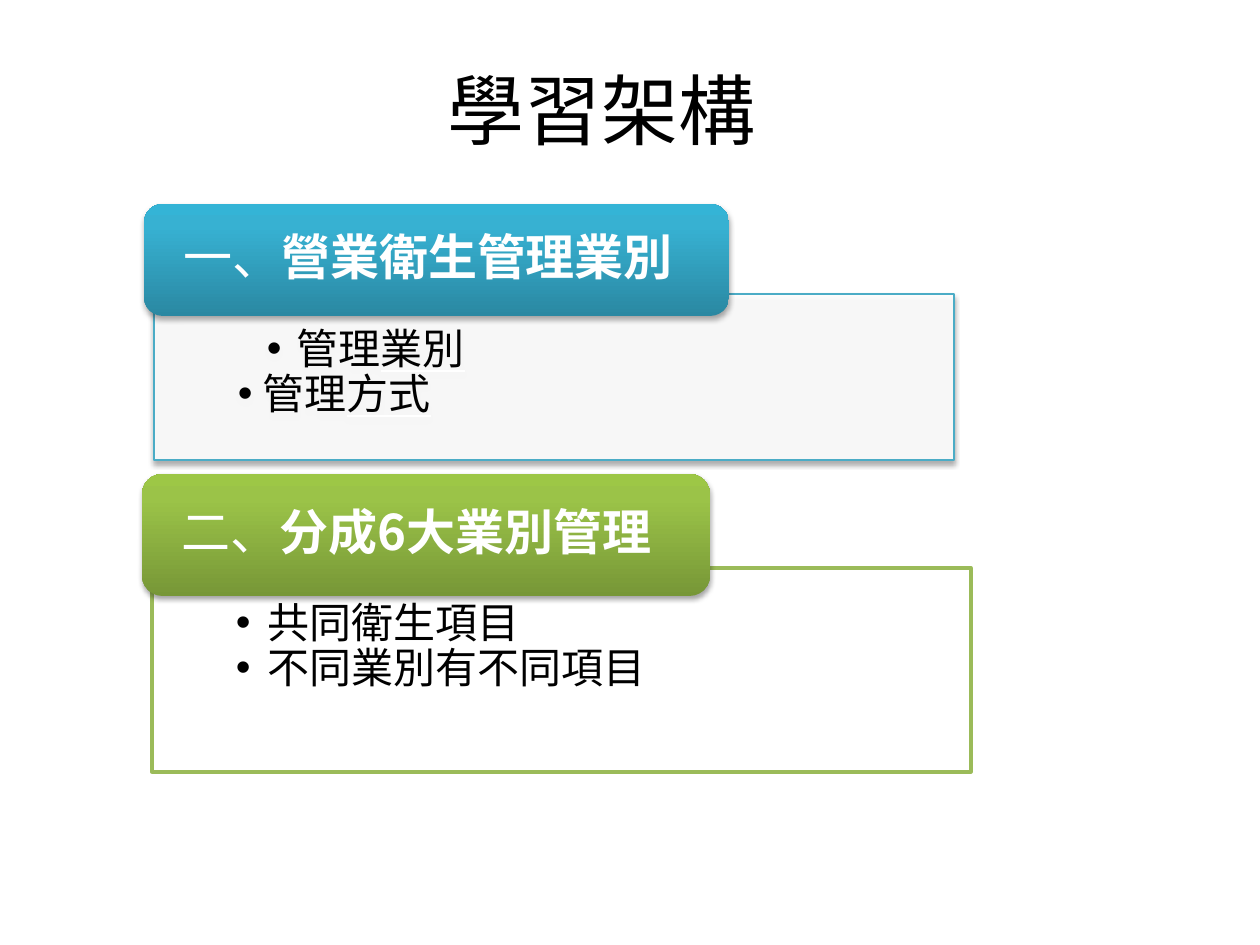
from lxml import etree
from pptx import Presentation
from pptx.dml.color import RGBColor
from pptx.enum.shapes import MSO_SHAPE
from pptx.enum.text import MSO_ANCHOR, PP_ALIGN
from pptx.oxml.ns import qn
from pptx.util import Emu, Pt

RECTANGLE, ROUNDED = MSO_SHAPE.RECTANGLE, MSO_SHAPE.ROUNDED_RECTANGLE
TOP, MIDDLE = MSO_ANCHOR.TOP, MSO_ANCHOR.MIDDLE
LEFT, CENTER = PP_ALIGN.LEFT, PP_ALIGN.CENTER
FONT = "Noto Sans CJK SC"
BLACK, WHITE = "000000", "FFFFFF"
PANEL_MARGINS = (84, 34, 84, 24)

# Each section: header (box, gradient, runs), panel (box, line, opacity, bullets)
# A bullet is (left margin, hanging indent, runs); a run is (text, format)
UNDERLINED = {"underline": True}
BOLD = {"bold": True}
SECTIONS = [
    {
        "header_box": (144, 204, 585, 112),
        "gradient": [(0, "2A88A2"), (80, "37B1D2"), (100, "34B4D6")],
        "heading": [("一、", {}), ("營業衛生管理業別", BOLD)],
        "panel_box": (154, 294, 800, 166),
        "line": ("4BACC6", 0.75),
        "translucent": True,
        "bullets": [
            (59, 30, [("管理", {}), ("業別", UNDERLINED)]),
            (25, 25, [("管理", {}), ("方式", UNDERLINED)]),
        ],
    },
    {
        "header_box": (142, 474, 568, 122),
        "gradient": [(0, "779737"), (80, "9BC348"), (100, "9DC746")],
        "heading": [("二、", {}), ("分成6大業別管理", BOLD)],
        "panel_box": (152, 568, 819, 204),
        "line": ("9BBB59", 2),
        "translucent": False,
        "bullets": [
            (32, 32, [("共同衛生項目", {})]),
            (32, 32, [("不同業別有不同項目", {})]),
        ],
    },
]


def px(length):
    return Emu(round(length * 914400 / 126))


def color(value):
    return RGBColor.from_string(value)


def add_node(parent, tag, **attributes):
    values = {name: str(value) for name, value in attributes.items()}
    return etree.SubElement(parent, qn(tag), values)


def set_values(target, values):
    for name, value in values.items():
        setattr(target, name, value)


def set_frame(frame, margins, anchor):
    sides = ("margin_left", "margin_top", "margin_right", "margin_bottom")
    set_values(frame, dict(zip(sides, map(px, margins))))
    set_values(frame, {"word_wrap": True, "vertical_anchor": anchor})


def add_run(paragraph, text, size, font_color, formats):
    run = paragraph.add_run()
    run.text = text
    run.font.color.rgb = color(font_color)
    set_values(run.font, {"size": Pt(size), **formats})
    properties = run._r.get_or_add_rPr()
    if formats.get("underline"):
        underline_fill = add_node(properties, "a:uFill")
        add_node(add_node(underline_fill, "a:solidFill"), "a:srgbClr", val=WHITE)
    run.font.name = FONT
    add_node(properties, "a:ea", typeface=FONT)


def add_bullet(paragraph, margin, hanging):
    properties = paragraph._p.get_or_add_pPr()
    properties.set("marL", str(px(margin)))
    properties.set("indent", str(-px(hanging)))
    add_node(add_node(properties, "a:buClr"), "a:srgbClr", val=BLACK)
    add_node(properties, "a:buFont", typeface="Arial")
    add_node(properties, "a:buChar", char="•")
    paragraph.level = 1


def add_shadow(shape):
    effects = shape._element.spPr.find(qn("a:effectLst"))
    shadow = add_node(effects, "a:outerShdw", blurRad=Pt(3.1), dist=Pt(1.8),
                      dir=90 * 60000, rotWithShape=0)
    add_node(add_node(shadow, "a:srgbClr", val=BLACK), "a:alpha", val=35000)


def add_box(slide, kind, box):
    shape = slide.shapes.add_shape(kind, *map(px, box))
    shape.shadow.inherit = False
    return shape


def fill_gradient(shape, stops):
    shape.fill.gradient()
    shape.fill.gradient_angle = 90
    stop_list = shape._element.spPr.find(qn("a:gradFill")).find(qn("a:gsLst"))
    for stop in list(stop_list):
        stop_list.remove(stop)
    for position, value in stops:
        stop = add_node(stop_list, "a:gs", pos=position * 1000)
        add_node(stop, "a:srgbClr", val=value)


def add_panel(slide, section):
    shape = add_box(slide, RECTANGLE, section["panel_box"])
    shape.fill.solid()
    shape.fill.fore_color.rgb = color(WHITE)
    line_color, width = section["line"]
    shape.line.color.rgb = color(line_color)
    shape.line.width = Pt(width)
    if section["translucent"]:
        fill = shape._element.spPr.find(qn("a:solidFill"))
        add_node(fill[0], "a:alpha", val=90000)
        add_shadow(shape)
    frame = shape.text_frame
    set_frame(frame, PANEL_MARGINS, TOP)
    for index, (margin, hanging, runs) in enumerate(section["bullets"]):
        paragraph = frame.add_paragraph() if index else frame.paragraphs[0]
        add_bullet(paragraph, margin, hanging)
        set_values(paragraph, {"alignment": LEFT, "line_spacing": 0.9})
        for text, formats in runs:
            add_run(paragraph, text, 24, BLACK, formats)


def add_header(slide, section):
    shape = add_box(slide, ROUNDED, section["header_box"])
    fill_gradient(shape, section["gradient"])
    shape.line.fill.background()
    add_shadow(shape)
    set_frame(shape.text_frame, (34, 6, 29, 6), MIDDLE)
    paragraph = shape.text_frame.paragraphs[0]
    set_values(paragraph, {"alignment": LEFT, "line_spacing": 0.9})
    for text, formats in section["heading"]:
        add_run(paragraph, text, 28, WHITE, formats)


def add_title(slide, text):
    frame = slide.shapes.add_textbox(*map(px, (35, 45, 1134, 127))).text_frame
    set_frame(frame, (13, 6, 13, 6), MIDDLE)
    frame.paragraphs[0].alignment = CENTER
    add_run(frame.paragraphs[0], text, 44, BLACK, {})


def main():
    presentation = Presentation()
    presentation.slide_width, presentation.slide_height = px(1260), px(945)
    slide = presentation.slides.add_slide(presentation.slide_layouts[6])
    # Each header overlaps the top edge of its panel
    for section in SECTIONS:
        add_panel(slide, section)
        add_header(slide, section)
    add_title(slide, "學習架構")
    presentation.save("out.pptx")


if __name__ == "__main__":
    main()
